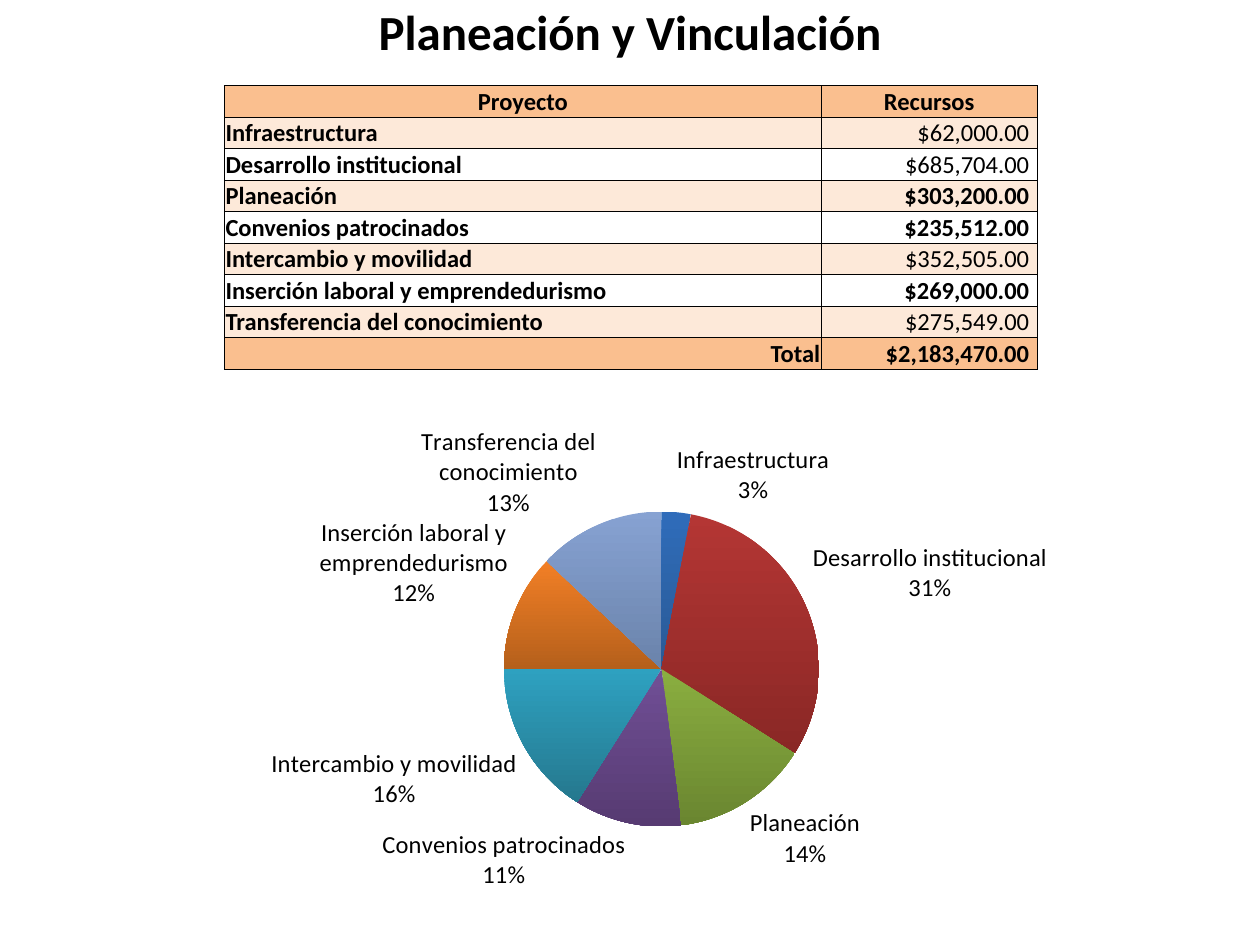
from lxml import etree
from pptx import Presentation
from pptx import util as u
from pptx.chart.data import CategoryChartData
from pptx.dml.color import RGBColor
from pptx.enum import chart as ch, text
from pptx.oxml import parse_xml
from pptx.oxml.ns import nsdecls, qn

FONT = "Calibri"
BLACK, HEADER, BAND = "000000", "FABF8F", "FDE9D9"
LEFT, CENTER, RIGHT = text.PP_ALIGN.LEFT, text.PP_ALIGN.CENTER, text.PP_ALIGN.RIGHT

# project, resources, resources in bold, share in %, slice colours from top to bottom
PROJECTS = [
    ("Infraestructura", "$62,000.00", False, 3, ("2F6CBA", "2A5A95")),
    ("Desarrollo institucional", "$685,704.00", False, 31, ("B43634", "8A2725")),
    ("Planeación", "$303,200.00", True, 14, ("8AAE40", "6A8630")),
    ("Convenios patrocinados", "$235,512.00", True, 11, ("704F96", "573B72")),
    ("Intercambio y movilidad", "$352,505.00", False, 16, ("2EA1C0", "25788E")),
    ("Inserción laboral y emprendedurismo", "$269,000.00", True, 12, ("F27F26", "B5601B")),
    ("Transferencia del conocimiento", "$275,549.00", False, 13, ("87A2D2", "6A83AB")),
]


def rgb(color):
    return RGBColor.from_string(color)


def style_font(font, size, bold=False, color=BLACK):
    font.name, font.size, font.bold = FONT, u.Pt(size), bold
    font.color.rgb = rgb(color)


def write(frame, wording, size=14, bold=False, align=LEFT, color=BLACK):
    paragraph = frame.paragraphs[0]
    paragraph.alignment = align
    run = paragraph.add_run()
    run.text = wording
    style_font(run.font, size, bold, color)


def add_title(slide, left, top, width, height):
    title = slide.shapes.add_textbox(*map(u.Inches, (left, top, width, height)))
    frame = title.text_frame
    frame.word_wrap = True
    frame.auto_size = text.MSO_AUTO_SIZE.SHAPE_TO_FIT_TEXT
    frame.vertical_anchor = text.MSO_ANCHOR.MIDDLE
    frame.margin_top, frame.margin_bottom = u.Inches(0.17), u.Inches(0.04)
    write(frame, "Planeación y Vinculación", size=28, bold=True, align=CENTER)


def add_borders(cell):
    properties = cell._tc.get_or_add_tcPr()
    for side in ("lnL", "lnR", "lnT", "lnB"):
        properties.append(parse_xml(
            f'<a:{side} {nsdecls("a")} w="{u.Pt(0.5)}"><a:solidFill>'
            f'<a:srgbClr val="{BLACK}"/></a:solidFill></a:{side}>'))


def fill_cell(cell, wording, bold, align, fill, right_margin=0.01):
    add_borders(cell)
    if fill:
        cell.fill.solid()
        cell.fill.fore_color.rgb = rgb(fill)
    else:
        cell.fill.background()
    cell.vertical_anchor = text.MSO_ANCHOR.MIDDLE
    cell.margin_left = cell.margin_top = u.Inches(0.01)
    cell.margin_right, cell.margin_bottom = u.Inches(right_margin), 0
    write(cell.text_frame, wording, bold=bold, align=align)


def add_resources_table(slide, left, top, width, height):
    row_count = len(PROJECTS) + 2
    table = slide.shapes.add_table(
        row_count, 2, *map(u.Inches, (left, top, width, height))).table
    table.first_row = table.horz_banding = False
    amount_width = 1.71
    table.columns[0].width = u.Inches(width - amount_width)
    table.columns[1].width = u.Inches(amount_width)
    for row in table.rows:
        row.height = u.Inches(height / row_count)

    for column, heading in enumerate(("Proyecto", "Recursos")):
        fill_cell(table.cell(0, column), heading, True, CENTER, HEADER)
    for row, (project, amount, bold, _, _) in enumerate(PROJECTS, 1):
        fill = BAND if row % 2 else None
        fill_cell(table.cell(row, 0), project, True, LEFT, fill)
        fill_cell(table.cell(row, 1), amount, bold, RIGHT, fill, 0.06)
    total = row_count - 1
    fill_cell(table.cell(total, 0), "Total", True, RIGHT, HEADER)
    fill_cell(table.cell(total, 1), "$2,183,470.00", True, RIGHT, HEADER, 0.06)


def place_plot(chart, **fractions):
    """Fix the inner plot area; x, y, w and h are fractions of the chart."""
    plot_area = chart._chartSpace.chart.plotArea
    for automatic in plot_area.findall(qn("c:layout")):
        plot_area.remove(automatic)
    layout = etree.Element(qn("c:layout"))
    manual = etree.SubElement(layout, qn("c:manualLayout"))
    settings = {"layoutTarget": "inner", "xMode": "edge", "yMode": "edge", **fractions}
    for tag, value in settings.items():
        etree.SubElement(manual, qn(f"c:{tag}")).set("val", str(value))
    plot_area.insert(0, layout)


def add_share_pie(slide, left, top, width, height):
    data = CategoryChartData()
    data.categories = [project[0] for project in PROJECTS]
    data.add_series("Series 1", [project[3] for project in PROJECTS])
    chart = slide.shapes.add_chart(
        ch.XL_CHART_TYPE.PIE, *map(u.Inches, (left, top, width, height)), data).chart
    chart.has_legend = chart.has_title = False
    style_font(chart.font, 10)
    place_plot(chart, x=0.4, y=0.21, w=0.25, h=0.63)

    plot = chart.plots[0]
    plot.vary_by_categories = True
    for index, project in enumerate(PROJECTS):
        fill = plot.series[0].points[index].format.fill
        fill.gradient()
        fill.gradient_angle = 270
        for stop, color in zip(fill.gradient_stops, project[4]):
            stop.color.rgb = rgb(color)

    plot.has_data_labels = True
    labels = plot.data_labels
    style_font(labels.font, 14)
    labels.number_format, labels.number_format_is_linked = "0%", False
    labels.show_value = False
    labels.show_category_name = labels.show_percentage = True
    labels.position = ch.XL_LABEL_POSITION.OUTSIDE_END


def main():
    deck = Presentation()
    deck.slide_width, deck.slide_height = u.Inches(10), u.Inches(7.5)
    slide = deck.slides.add_slide(deck.slide_layouts[6])
    add_resources_table(slide, 1.78, 0.68, 6.45, 2.25)
    add_title(slide, 0.59, -0.16, 8.82, 0.68)
    add_share_pie(slide, 0, 3.2, 10, 4.02)
    deck.save("out.pptx")


if __name__ == "__main__":
    main()
